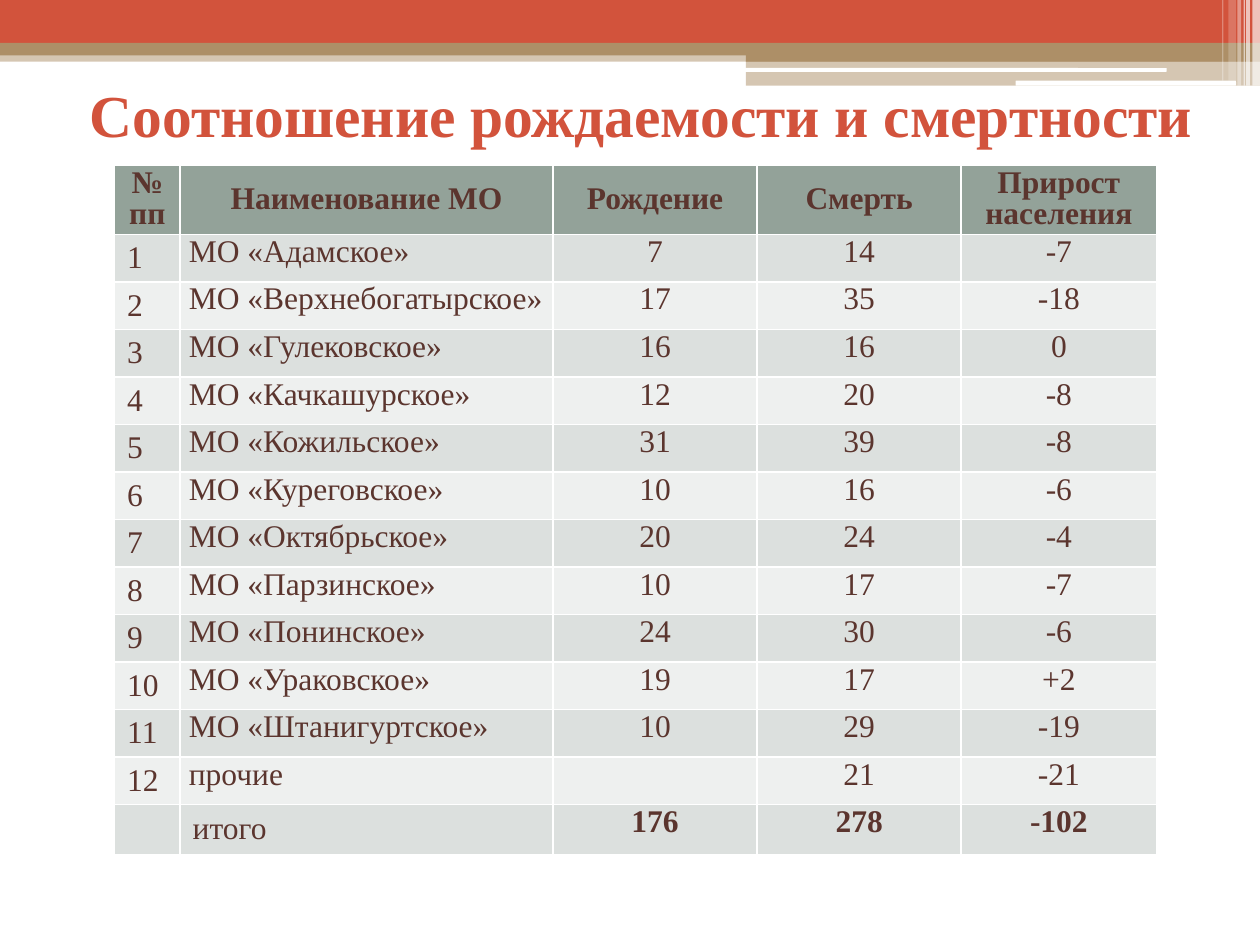
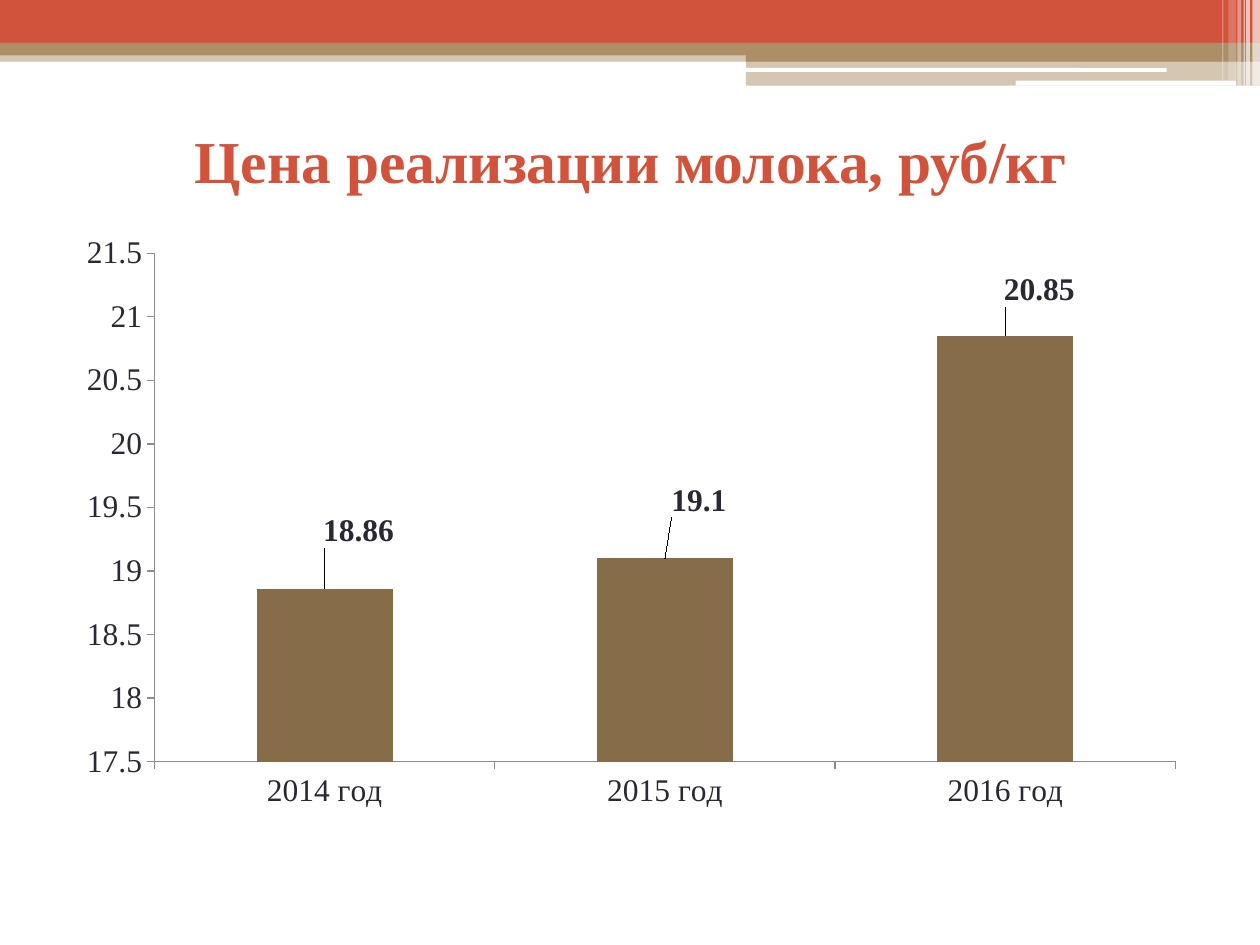
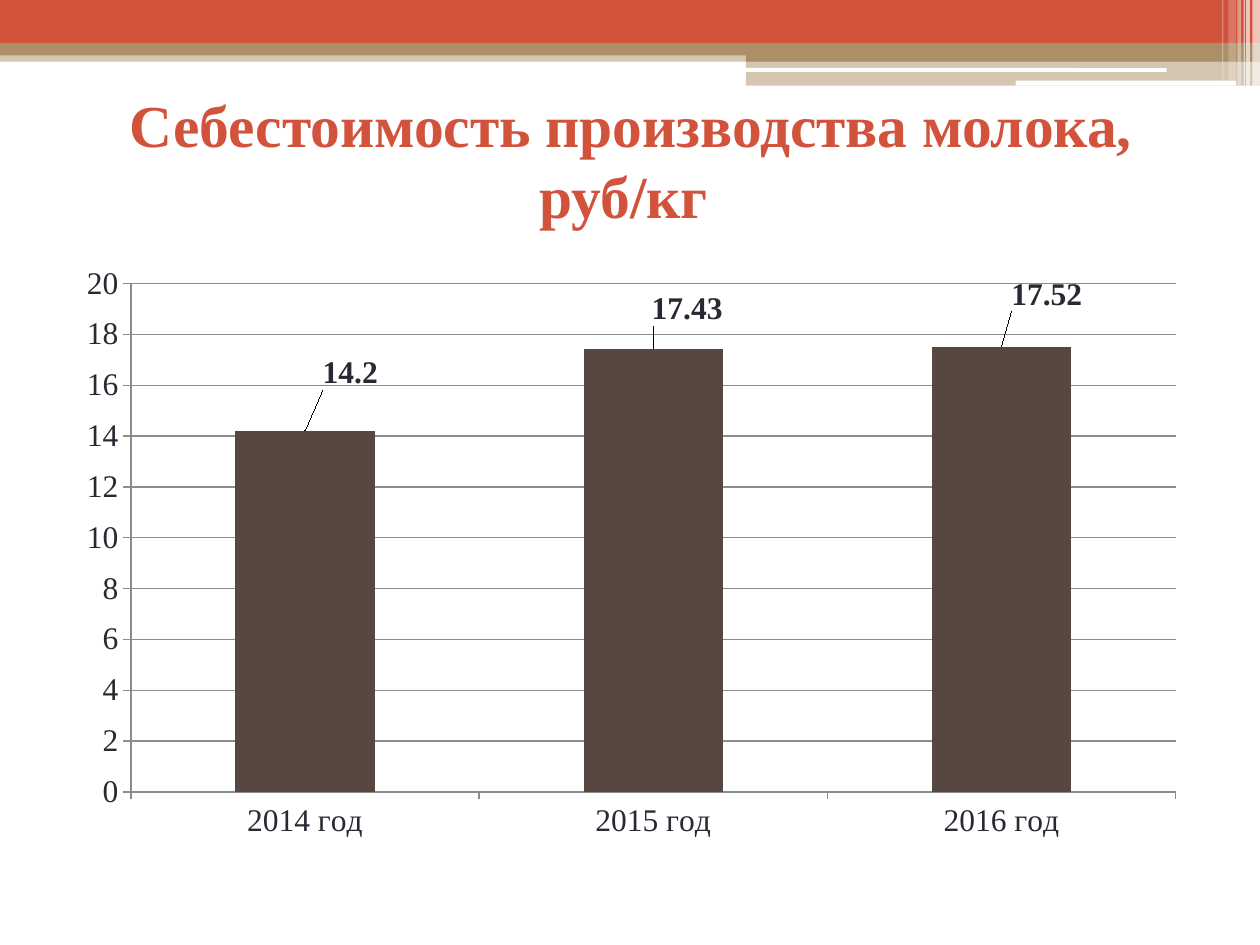
from dataclasses import dataclass

from lxml.etree import SubElement
from pptx import Presentation
from pptx.chart.data import CategoryChartData
from pptx.dml.color import RGBColor
from pptx.enum.chart import XL_CHART_TYPE as ChartType
from pptx.enum.chart import XL_LABEL_POSITION as LabelPosition
from pptx.enum.chart import XL_TICK_MARK as TickMark
from pptx.enum.shapes import MSO_SHAPE as Shape
from pptx.enum.text import MSO_ANCHOR as Anchor
from pptx.enum.text import PP_ALIGN as Align
from pptx.oxml.ns import qn
from pptx.util import Inches, Pt


@dataclass(frozen=True)
class Theme:
    font: str = "Times New Roman"
    title_size: int = 34
    text_size: int = 18
    accent: str = "D2533C"
    sand: str = "AD8F67"
    white: str = "FFFFFF"
    table_text: str = "5B352E"
    table_head: str = "93A299"
    table_bands: tuple = ("DCE0DE", "EEF0EF")
    chart_text: str = "292934"
    axis: str = "8C8C8C"
    milk_price: str = "866C49"
    milk_cost: str = "564841"


@dataclass(frozen=True)
class Box:
    left: float
    top: float
    width: float
    height: float

    def inches(self):
        return [Inches(v) for v in (self.left, self.top, self.width, self.height)]


THEME = Theme()

BANDS = [
    (Box(0, 0.4, 10, 0.09), THEME.sand, 50),
    (Box(0, 0, 10, 0.34), THEME.accent, 100),
    (Box(0, 0.34, 10, 0.1), THEME.sand, 100),
    (Box(5.92, 0.39, 4.08, 0.1), THEME.sand, 100),
    (Box(5.92, 0.48, 4.08, 0.2), THEME.sand, 50),
]
HIGHLIGHTS = [Box(5.91, 0.54, 3.35, 0.03), Box(8.06, 0.64, 1.75, 0.04)]
STRIPES = [
    (9.94, 0.06, 0.68, 65),
    (9.89, 0.03, 0.68, 65),
    (9.87, 0.01, 0.68, 60),
    (9.82, 0.03, 0.68, 40),
    (9.75, 0.06, 0.64, 20),
    (9.7, 0.01, 0.64, 30),
]

HEADINGS = ["№\nпп", "Наименование МО", "Рождение", "Смерть", "Прирост населения"]
MUNICIPALITIES = [
    ("МО «Адамское»", "7", "14", "-7"),
    ("МО «Верхнебогатырское»", "17", "35", "-18"),
    ("МО «Гулековское»", "16", "16", "0"),
    ("МО «Качкашурское»", "12", "20", "-8"),
    ("МО «Кожильское»", "31", "39", "-8"),
    ("МО «Куреговское»", "10", "16", "-6"),
    ("МО «Октябрьское»", "20", "24", "-4"),
    ("МО «Парзинское»", "10", "17", "-7"),
    ("МО «Понинское»", "24", "30", "-6"),
    ("МО «Ураковское»", "19", "17", "+2"),
    ("МО «Штанигуртское»", "10", "29", "-19"),
    ("прочие", "", "21", "-21"),
]
TOTALS = ("", "итого", "176", "278", "-102")
COLUMN_WIDTHS = [0.52, 2.96, 1.62, 1.62, 1.55]
YEARS = ["2014 год", "2015 год", "2016 год"]


def rgb(value):
    return RGBColor.from_string(value)


def set_font(font, size, color, bold=False):
    font.name = THEME.font
    font.size = Pt(size)
    font.bold = bold
    font.color.rgb = rgb(color)


def add_block(slide, box, color, opacity=100, kind=Shape.RECTANGLE):
    block = slide.shapes.add_shape(kind, *box.inches())
    block.shadow.inherit = False
    block.line.fill.background()
    block.fill.solid()
    block.fill.fore_color.rgb = rgb(color)
    if opacity < 100:
        tint = next(block.element.iter(qn("a:srgbClr")))
        SubElement(tint, qn("a:alpha"), val=str(opacity * 1000))
    return block


def move_header_to_layout(slide):
    header = [add_block(slide, *band) for band in BANDS]
    header += [
        add_block(slide, box, THEME.white, kind=Shape.ROUNDED_RECTANGLE)
        for box in HIGHLIGHTS
    ]
    header += [
        add_block(slide, Box(left, 0, width, height), THEME.white, opacity)
        for left, width, height, opacity in STRIPES
    ]
    layout_tree = slide.slide_layout.shapes.element
    for position, block in enumerate(header, start=2):
        layout_tree.insert(position, block.element)


def add_titled_slide(prs, title, box):
    slide = prs.slides.add_slide(prs.slide_layouts[5])
    heading = slide.shapes.title
    heading.left, heading.top, heading.width, heading.height = box.inches()
    frame = heading.text_frame
    frame.text = title
    frame.word_wrap = True
    frame.vertical_anchor = Anchor.MIDDLE
    line = frame.paragraphs[0]
    line.alignment = Align.CENTER
    set_font(line.font, THEME.title_size, THEME.accent, bold=True)
    return slide


def fill_cell(cell, text, fill, bold, centered, compact):
    cell.text = text
    cell.fill.solid()
    cell.fill.fore_color.rgb = rgb(fill)
    if compact:
        cell.margin_left = cell.margin_right = Inches(0.07)
        cell.margin_top = cell.margin_bottom = 0
    for line in cell.text_frame.paragraphs:
        line.alignment = Align.CENTER if centered else Align.LEFT
        set_font(line.font, THEME.text_size, THEME.table_text, bold)


def add_population_table(slide, box):
    rows = [(str(n), *row) for n, row in enumerate(MUNICIPALITIES, start=1)]
    rows.append(TOTALS)
    table = slide.shapes.add_table(
        len(rows) + 1, len(HEADINGS), *box.inches()
    ).table
    for column, width in zip(table.columns, COLUMN_WIDTHS):
        column.width = Inches(width)
    heights = [0.55] + [0.37] * len(MUNICIPALITIES) + [0.4]
    for row, height in zip(table.rows, heights):
        row.height = Inches(height)

    for c, text in enumerate(HEADINGS):
        cell = table.cell(0, c)
        fill_cell(cell, text, THEME.table_head, True, True, True)
        cell.vertical_anchor = Anchor.MIDDLE
        for line in cell.text_frame.paragraphs:
            line.line_spacing = 0.9

    for r, row in enumerate(rows, start=1):
        is_total = r == len(rows)
        for c, text in enumerate(row):
            is_count = c >= 2
            fill_cell(
                table.cell(r, c),
                text,
                THEME.table_bands[(r - 1) % 2],
                bold=is_total and is_count,
                centered=is_count,
                compact=is_count or (c == 1 and not is_total),
            )


def shift_labels(chart, shifts):
    for label, shift in zip(chart.element.iter(qn("c:dLbl")), shifts):
        layout = SubElement(label, qn("c:layout"))
        manual = SubElement(layout, qn("c:manualLayout"))
        for axis, distance in zip("xy", shift):
            SubElement(manual, qn(f"c:{axis}"), val=str(distance))
        label.find(qn("c:idx")).addnext(layout)


def add_milk_chart(slide, box, values, color, scale, gridlines, label_shifts):
    data = CategoryChartData()
    data.categories = YEARS
    data.add_series("Series 1", values)
    chart = slide.shapes.add_chart(
        ChartType.COLUMN_CLUSTERED, *box.inches(), data
    ).chart
    chart.has_legend = False
    chart.has_title = False
    set_font(chart.font, THEME.text_size, THEME.chart_text)

    value_axis = chart.value_axis
    value_axis.minimum_scale, value_axis.maximum_scale, value_axis.major_unit = scale
    value_axis.has_major_gridlines = gridlines
    lines = [value_axis.format.line, chart.category_axis.format.line]
    if gridlines:
        lines.append(value_axis.major_gridlines.format.line)
    for line in lines:
        line.color.rgb = rgb(THEME.axis)
        line.width = Pt(0.75)
    for axis in (value_axis, chart.category_axis):
        axis.major_tick_mark = TickMark.OUTSIDE

    plot = chart.plots[0]
    plot.gap_width = 150
    plot.vary_by_categories = False
    series = plot.series[0]
    series.invert_if_negative = False
    series.format.fill.solid()
    series.format.fill.fore_color.rgb = rgb(color)
    for index in range(len(values)):
        label = series.points[index].data_label
        set_font(label.font, THEME.text_size, THEME.chart_text, bold=True)
        label.position = LabelPosition.OUTSIDE_END
    shift_labels(chart, label_shifts)


def main():
    prs = Presentation()
    prs.slide_width, prs.slide_height = Inches(10), Inches(7.5)
    chart_title = Box(0.51, 0.68, 9, 1.17)

    population = add_titled_slide(
        prs, "Соотношение рождаемости и смертности", Box(0.59, 0.52, 9, 0.77)
    )
    move_header_to_layout(population)
    add_population_table(population, Box(0.91, 1.31, 8.27, 5.4))

    price = add_titled_slide(prs, "Цена реализации молока, руб/кг", chart_title)
    add_milk_chart(
        price,
        Box(0.51, 1.78, 9, 4.73),
        values=(18.86, 19.1, 20.85),
        color=THEME.milk_price,
        scale=(17.5, 21.5, 0.5),
        gridlines=False,
        label_shifts=[(0.03, -0.06), (0.03, -0.06), (0.03, -0.04)],
    )

    cost = add_titled_slide(
        prs, "Себестоимость производства молока, руб/кг ", chart_title
    )
    add_milk_chart(
        cost,
        Box(0.51, 2.02, 9, 4.73),
        values=(14.2, 17.43, 17.52),
        color=THEME.milk_cost,
        scale=(0, 20, 2),
        gridlines=True,
        label_shifts=[(0.04, -0.06), (0.03, -0.03), (0.04, -0.05)],
    )

    prs.save("out.pptx")


if __name__ == "__main__":
    main()
